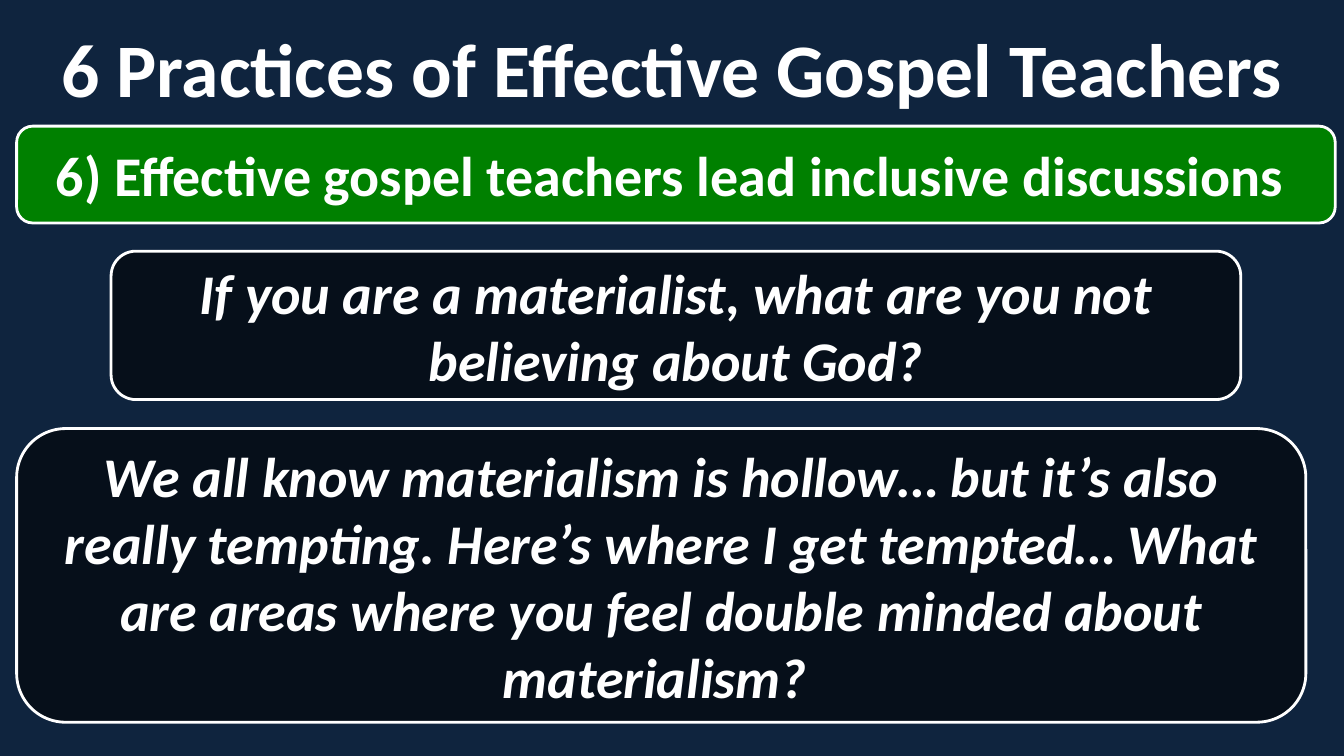
import pptx
import pptx.util
import pptx.dml.color
import pptx.enum.shapes
import pptx.enum.text
import lxml.etree

Cm = pptx.util.Cm
Pt = pptx.util.Pt
WHITE = "FFFFFF"


def color(code):
    """Turn a hex string into a colour."""
    return pptx.dml.color.RGBColor.from_string(code)


def write(shape, text, size, anchor, slant=False):
    """Put one centred bold white run into a shape."""
    frame = shape.text_frame
    frame.word_wrap = True
    frame.vertical_anchor = anchor
    para = frame.paragraphs[0]
    para.alignment = pptx.enum.text.PP_ALIGN.CENTER
    run = para.add_run()
    run.text = text
    font = run.font
    font.name = "Calibri"
    font.size = Pt(size)
    font.bold = True
    font.italic = slant
    font.color.rgb = color(WHITE)


def title(slide, box, text):
    """Place the heading in its box."""
    shape = slide.shapes.add_textbox(*map(Cm, box))
    write(shape, text, 54, pptx.enum.text.MSO_ANCHOR.TOP)


def panel(slide, box, text, fill, alpha=100, slant=False):
    """Place a rounded, outlined panel with its text."""
    kind = pptx.enum.shapes.MSO_SHAPE.ROUNDED_RECTANGLE
    shape = slide.shapes.add_shape(kind, *map(Cm, box))
    shape.shadow.inherit = False
    shape.fill.solid()
    shape.fill.fore_color.rgb = color(fill)
    if alpha < 100:
        tone = shape.fill._xPr.find(".//" + pptx.oxml.ns.qn("a:srgbClr"))
        node = lxml.etree.SubElement(tone, pptx.oxml.ns.qn("a:alpha"))
        node.set("val", str(alpha * 1000))
    shape.line.color.rgb = color(WHITE)
    shape.line.width = Pt(2)
    write(shape, text, 40, pptx.enum.text.MSO_ANCHOR.MIDDLE, slant)


def main():
    """Build the slide and save it."""
    deck = pptx.Presentation()
    deck.slide_width = Cm(33.87)
    deck.slide_height = Cm(19.05)
    slide = deck.slides.add_slide(deck.slide_layouts[6])
    slide.background.fill.solid()
    slide.background.fill.fore_color.rgb = color("0F243E")

    title(slide, (0, 0.42, 33.87, 2.75), "6 Practices of Effective Gospel Teachers")
    panel(slide, (0.42, 3.18, 33.23, 2.44),
          "6) Effective gospel teachers lead inclusive discussions ", "008000")
    quotes = [
        ((2.8, 6.33, 28.47, 3.74),
         "If you are a materialist, what are you not believing about God?"),
        ((0.42, 10.8, 32.49, 7.4),
         "We all know materialism is hollow… but it’s also really tempting. "
         "Here’s where I get tempted… What are areas where you feel double "
         "minded about materialism? "),
    ]
    for box, text in quotes:
        panel(slide, box, text, "000000", 58, True)
    deck.save("out.pptx")


if __name__ == "__main__":
    main()
